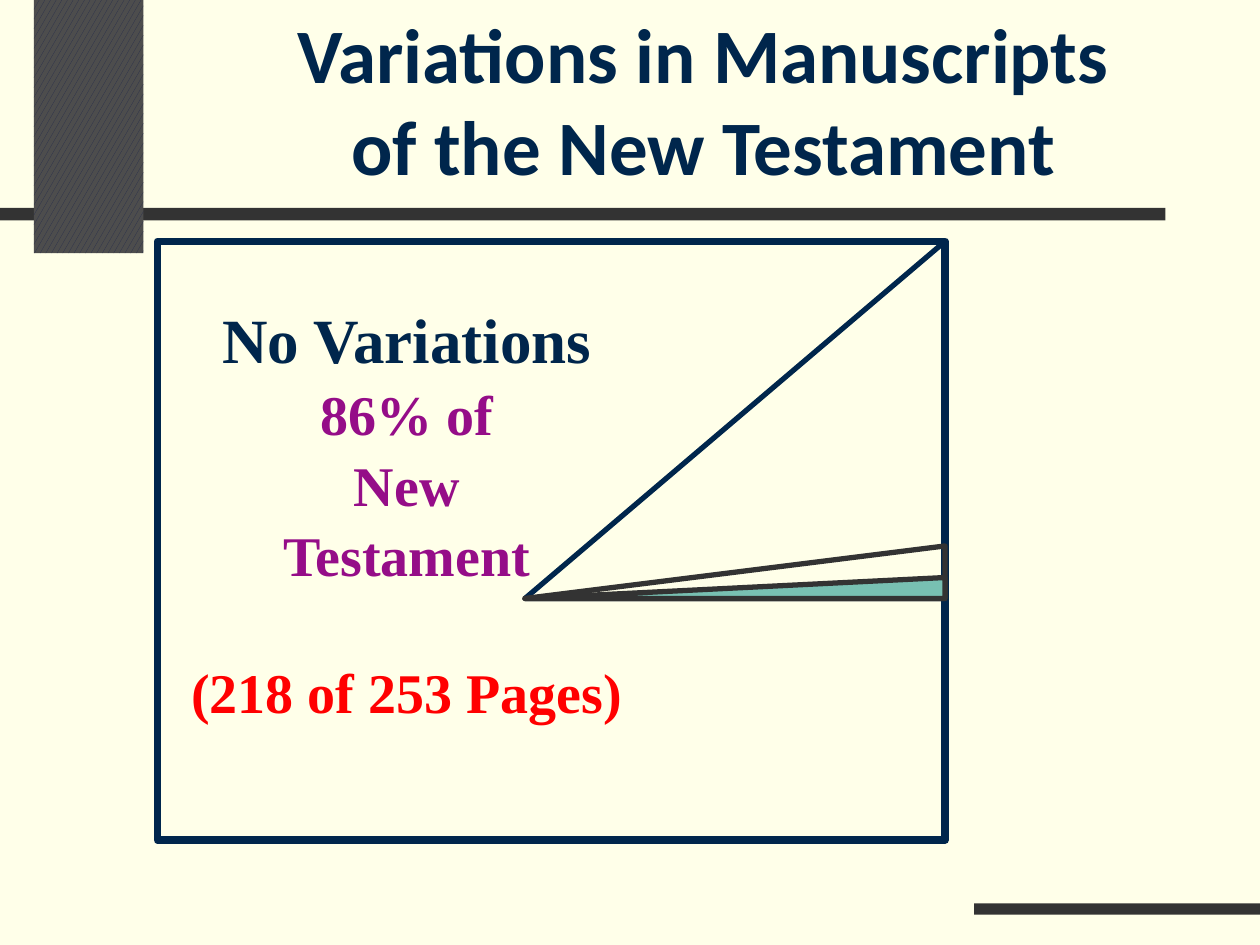
from pptx import Presentation
from pptx.dml.color import RGBColor
from pptx.enum.dml import MSO_PATTERN
from pptx.enum.shapes import MSO_SHAPE
from pptx.enum.text import MSO_ANCHOR, MSO_AUTO_SIZE, PP_ALIGN
from pptx.util import Pt

CREAM = RGBColor(0xFF, 0xFF, 0xE9)
NAVY = RGBColor(0x00, 0x26, 0x4C)
INDIGO = RGBColor(0x26, 0x2D, 0x4C)
CHARCOAL = RGBColor(0x33, 0x33, 0x33)
GRAY = RGBColor(0x4D, 0x4D, 0x4D)
TEAL = RGBColor(0x78, 0xC0, 0xB2)
PURPLE = RGBColor(0x95, 0x0D, 0x88)
RED = RGBColor(0xFF, 0x00, 0x00)

# Content
TITLE_LINES = ["Variations in Manuscripts", "of the New Testament"]
# text, size, colour, space before
SUMMARY_LINES = [
    ("No Variations", 36, NAVY, 0),
    ("86% of", 32, PURPLE, 2),
    ("New", 32, PURPLE, 2),
    ("Testament", 32, PURPLE, 2),
    ("(218 of 253 Pages)", 32, RED, 40),
]
# left, top, width, height
BARS = [(0, 118.8, 666, 7.2), (556.6, 516.2, 163.4, 6.5)]
COLUMN = (19.4, 0, 62.6, 144.7)
FRAME = (90, 138, 450, 342)
# Wedges share their base line and right edge: height, fill, line
WEDGE_WIDTH, WEDGE_BASE = 240, 342
WEDGES = [(204, None, NAVY), (30, None, CHARCOAL), (12, TEAL, CHARCOAL)]


def add_shape(shapes, kind, bounds, fill=None, line=None, weight=3):
    shape = shapes.add_shape(kind, *(Pt(length) for length in bounds))
    shape.shadow.inherit = False
    if fill is None:
        shape.fill.background()
    else:
        shape.fill.solid()
        shape.fill.fore_color.rgb = fill
    if line is None:
        shape.line.fill.background()
    else:
        shape.line.color.rgb = line
        shape.line.width = Pt(weight)
    return shape


def write_line(frame, text, first=False, font="Times New Roman", size=32,
               color=NAVY, before=0):
    para = frame.paragraphs[0] if first else frame.add_paragraph()
    para.alignment = PP_ALIGN.CENTER
    para.space_before = Pt(before)
    span = para.add_run()
    span.text = text
    span.font.name = font
    span.font.size = Pt(size)
    span.font.bold = True
    span.font.color.rgb = color


deck = Presentation()
deck.slide_width, deck.slide_height = Pt(720), Pt(540)
page = deck.slides.add_slide(deck.slide_layouts[5])
page.background.fill.solid()
page.background.fill.fore_color.rgb = CREAM

# Decorative bars and patterned column
for bar in BARS:
    add_shape(page.shapes, MSO_SHAPE.RECTANGLE, bar, fill=CHARCOAL)
column = add_shape(page.shapes, MSO_SHAPE.RECTANGLE, COLUMN)
column.fill.patterned()
column.fill.pattern = MSO_PATTERN.LARGE_CONFETTI
column.fill.fore_color.rgb = INDIGO
column.fill.back_color.rgb = GRAY

# Title
title = page.shapes.title
title.left, title.top, title.width, title.height = Pt(84), Pt(0), Pt(636), Pt(113)
title.text_frame.vertical_anchor = MSO_ANCHOR.TOP
title.text_frame.auto_size = MSO_AUTO_SIZE.NONE
for index, text in enumerate(TITLE_LINES):
    write_line(title.text_frame, text, first=index == 0, font="Calibri", size=44)

# Frame with nested wedges
diagram = page.shapes.add_group_shape().shapes
add_shape(diagram, MSO_SHAPE.RECTANGLE, FRAME, line=NAVY, weight=4.5)
wedge_left = FRAME[0] + FRAME[2] - WEDGE_WIDTH
for height, fill, line in WEDGES:
    bounds = (wedge_left, WEDGE_BASE - height, WEDGE_WIDTH, height)
    wedge = add_shape(diagram, MSO_SHAPE.RIGHT_TRIANGLE, bounds, fill, line)
    wedge.element.spPr.xfrm.set("flipH", "1")

# Summary text
box = diagram.add_textbox(Pt(102), Pt(164), Pt(261), Pt(243))
box.text_frame.word_wrap = False
box.text_frame.margin_top = Pt(7.5)
for index, (text, size, color, before) in enumerate(SUMMARY_LINES):
    write_line(box.text_frame, text, first=index == 0, size=size, color=color,
               before=before)

deck.save("out.pptx")
